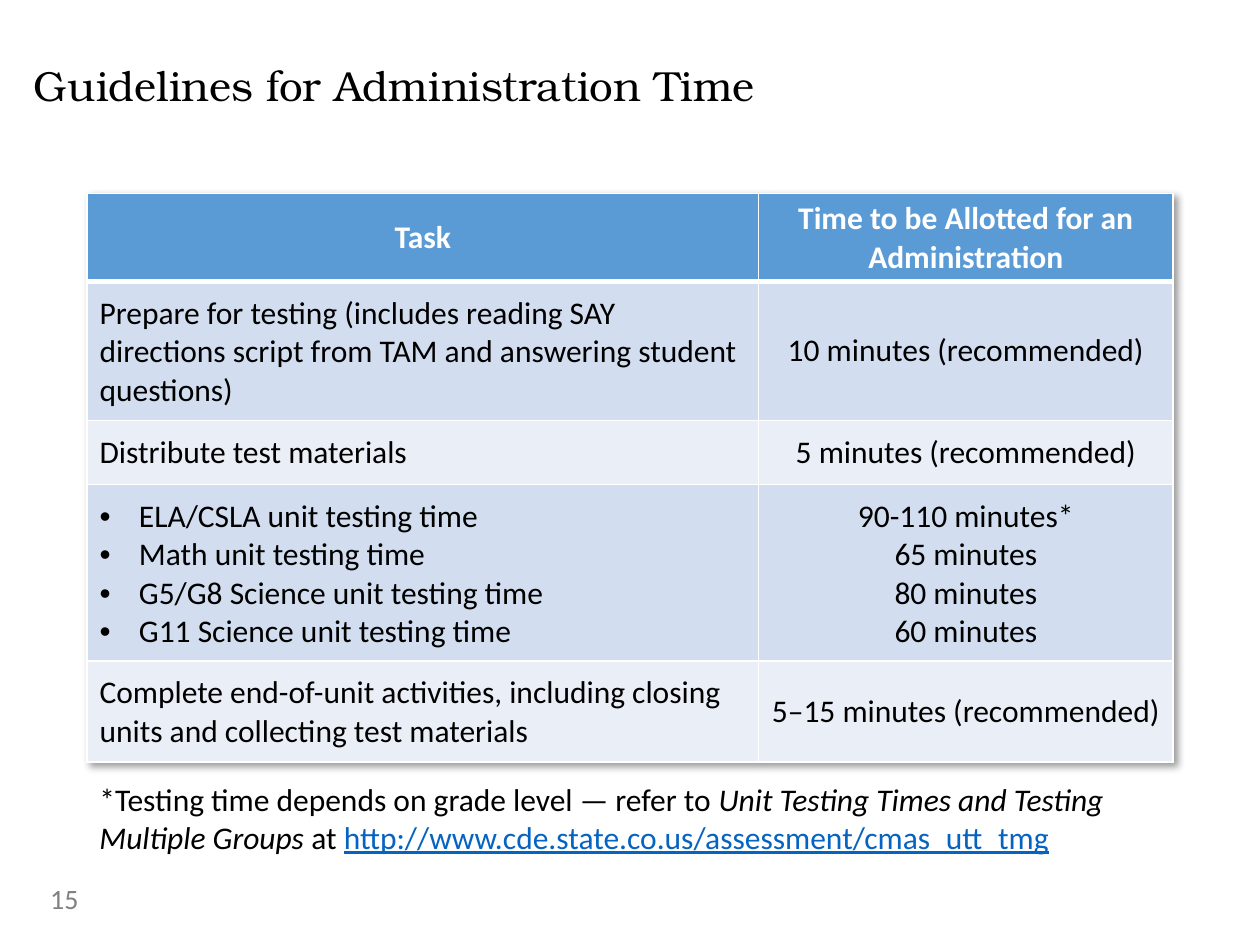
from dataclasses import dataclass

from lxml.etree import SubElement
from pptx import Presentation
from pptx.dml.color import RGBColor
from pptx.enum.text import MSO_ANCHOR, PP_ALIGN
from pptx.oxml import parse_xml
from pptx.oxml.ns import qn
from pptx.util import Pt

BLACK, WHITE, GREY, LINK = "000000", "FFFFFF", "808080", "0563C1"
HEADER_FILL, DARK_BAND, LIGHT_BAND = "5B9BD5", "D2DEEF", "EAEFF7"
BODY_FONT, TITLE_FONT = "Calibri", "TeX Gyre Bonum"
BULLET_INDENT = 22.5
SHADOW = (
    '<a:effectLst xmlns:a="http://schemas.openxmlformats.org/drawingml/2006/main">'
    '<a:outerShdw blurRad="50800" dist="38100" dir="2700000" algn="tl" rotWithShape="0">'
    '<a:prstClr val="black"><a:alpha val="40000"/></a:prstClr>'
    '</a:outerShdw></a:effectLst>'
)


@dataclass
class Span:
    text: str
    size: float = 18
    color: str = BLACK
    font: str = BODY_FONT
    bold: bool = False
    italic: bool = False
    underline: bool = False


@dataclass
class TextBox:
    left: float
    top: float
    width: float
    height: float
    spans: list[Span]


@dataclass
class Row:
    height: float
    tasks: list[str]
    times: list[str]
    bulleted: bool = False


BOXES = [
    TextBox(49.7, 442.1, 620.6, 51.1, [
        Span("*Testing time depends on grade level — refer to "),
        Span("Unit Testing Times and Testing Multiple Groups ", italic=True),
        Span("at "),
        Span("http://www.cde.state.co.us/assessment/cmas_utt_tmg",
             color=LINK, underline=True),
    ]),
    TextBox(21.6, 500.4, 36.7, 28.8, [Span("15", size=16, color=GREY)]),
]
TITLE = TextBox(19.4, 20.2, 478.8, 59.8, [
    Span("Guidelines for Administration Time", size=24, font=TITLE_FONT)])

COLUMN_WIDTHS = [383.8, 236.9]
ROWS = [
    Row(49.7, ["Task"], ["Time to be Allotted for an Administration"]),
    Row(79.4,
        ["Prepare for testing (includes reading SAY directions script from TAM "
         "and answering student questions)"],
        ["10 minutes (recommended)"]),
    Row(36.6, ["Distribute test materials"], ["5 minutes (recommended)"]),
    Row(100.6,
        ["ELA/CSLA unit testing time", "Math unit testing time",
         "G5/G8 Science unit testing time", "G11 Science unit testing time"],
        ["90-110 minutes*", "65 minutes", "80 minutes", "60 minutes"],
        bulleted=True),
    Row(57.7,
        ["Complete end-of-unit activities, including closing units and "
         "collecting test materials"],
        ["5–15 minutes (recommended)"]),
]


def rgb(color: str) -> RGBColor:
    return RGBColor.from_string(color)


def add_span(para, span: Span) -> None:
    run = para.add_run()
    run.text = span.text
    font = run.font
    font.name, font.size = span.font, Pt(span.size)
    font.bold, font.italic, font.underline = span.bold, span.italic, span.underline
    font.color.rgb = rgb(span.color)


def add_text_box(page, box: TextBox):
    shape = page.shapes.add_textbox(
        Pt(box.left), Pt(box.top), Pt(box.width), Pt(box.height))
    frame = shape.text_frame
    frame.word_wrap = True
    for span in box.spans:
        add_span(frame.paragraphs[0], span)
    return frame


def add_bullet(para) -> None:
    properties = para._p.get_or_add_pPr()
    properties.set("marL", str(Pt(BULLET_INDENT)))
    properties.set("indent", str(-Pt(BULLET_INDENT)))
    SubElement(properties, qn("a:buFont"), typeface="Arial")
    SubElement(properties, qn("a:buChar"), char="•")


def set_borders(cell, top: float, bottom: float) -> None:
    properties = cell._tc.get_or_add_tcPr()
    for side, width in (("L", 1), ("R", 1), ("T", top), ("B", bottom)):
        line = SubElement(properties, qn(f"a:ln{side}"), w=str(Pt(width)))
        fill = SubElement(line, qn("a:solidFill"))
        SubElement(fill, qn("a:srgbClr"), val=WHITE)


def fill_cell(cell, lines: list[str], row_index: int, centred: bool,
              bulleted: bool) -> None:
    header = row_index == 0
    set_borders(cell, top=3 if row_index == 1 else 1, bottom=3 if header else 1)
    cell.fill.solid()
    band = DARK_BAND if row_index % 2 else LIGHT_BAND
    cell.fill.fore_color.rgb = rgb(HEADER_FILL if header else band)
    cell.vertical_anchor = MSO_ANCHOR.MIDDLE
    cell.margin_left = cell.margin_right = Pt(7.2)
    cell.margin_top = cell.margin_bottom = Pt(3.6 if header else 7.2)
    for index, line in enumerate(lines):
        frame = cell.text_frame
        para = frame.add_paragraph() if index else frame.paragraphs[0]
        if bulleted:
            add_bullet(para)
        para.alignment = PP_ALIGN.CENTER if centred else PP_ALIGN.LEFT
        add_span(para, Span(line, color=WHITE if header else BLACK, bold=header))


def add_time_table(page, left: float, top: float) -> None:
    table = page.shapes.add_table(
        len(ROWS), len(COLUMN_WIDTHS), Pt(left), Pt(top),
        Pt(sum(COLUMN_WIDTHS)), Pt(sum(row.height for row in ROWS))).table
    table._tbl.tblPr.insert(0, parse_xml(SHADOW))
    for column, width in zip(table.columns, COLUMN_WIDTHS):
        column.width = Pt(width)
    for index, row in enumerate(ROWS):
        table.rows[index].height = Pt(row.height)
        fill_cell(table.cell(index, 0), row.tasks, index, index == 0, row.bulleted)
        fill_cell(table.cell(index, 1), row.times, index, True, False)


def main() -> None:
    deck = Presentation()
    deck.slide_width, deck.slide_height = Pt(720), Pt(540)
    page = deck.slides.add_slide(deck.slide_layouts[6])

    # Title
    frame = add_text_box(page, TITLE)
    frame.margin_left = frame.margin_right = Pt(0)
    frame.margin_top = frame.margin_bottom = Pt(0)
    frame.vertical_anchor = MSO_ANCHOR.MIDDLE
    frame.paragraphs[0].line_spacing = 0.9

    # Footnote and page number
    for box in BOXES:
        add_text_box(page, box)

    # Testing times
    add_time_table(page, 49.7, 110.5)

    deck.save("out.pptx")


if __name__ == "__main__":
    main()
